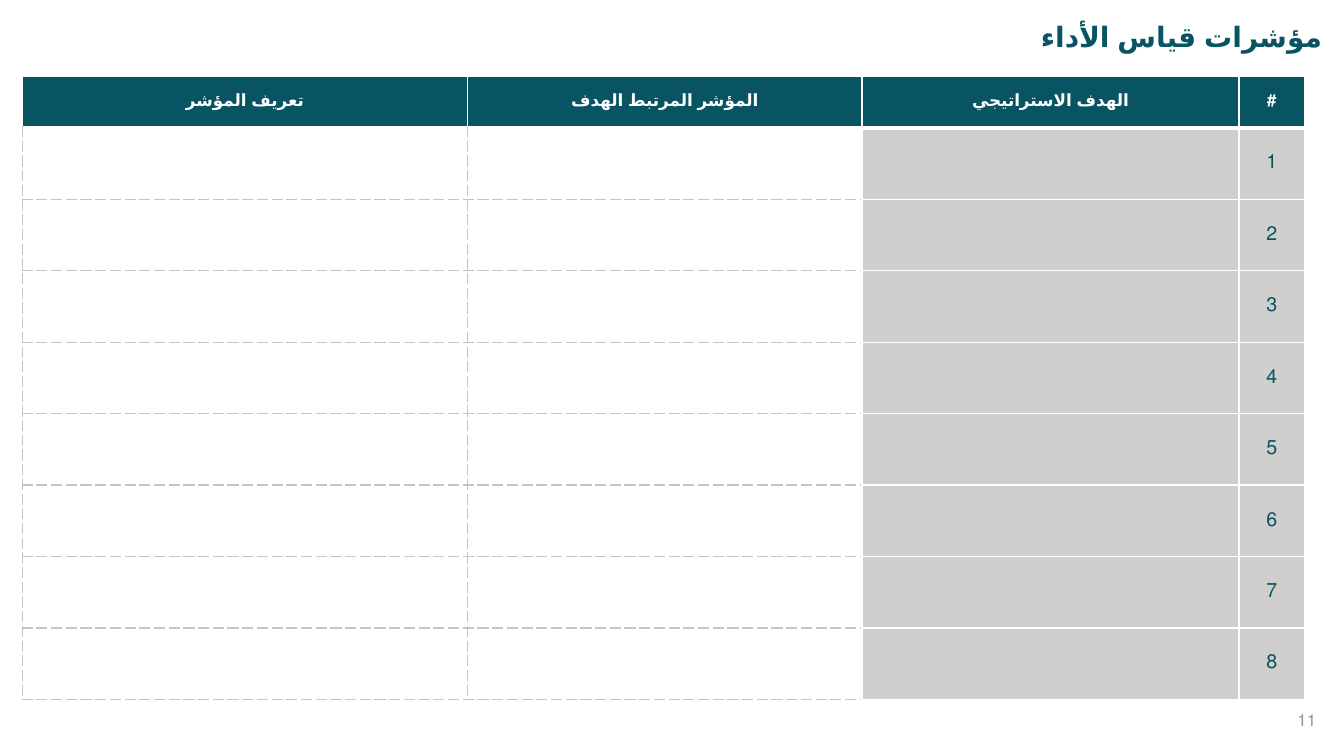
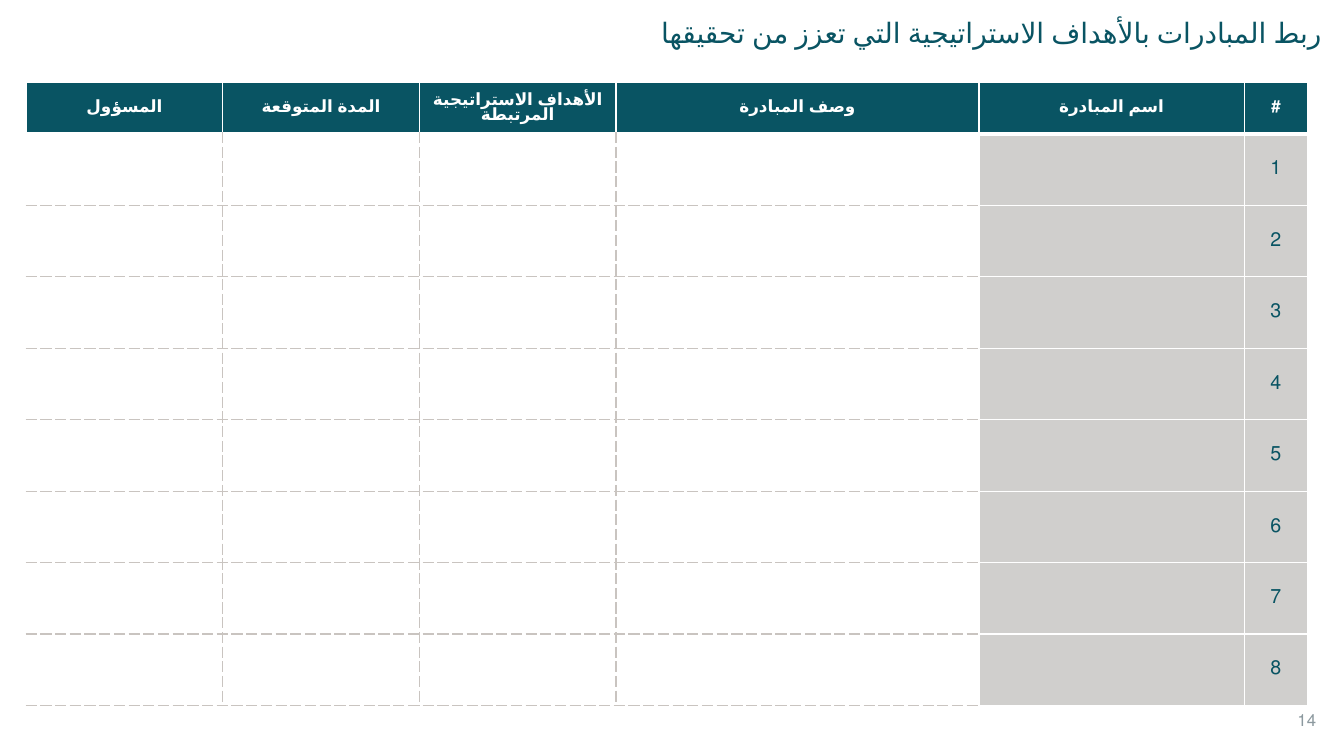
from dataclasses import dataclass

from lxml import etree
from pptx import Presentation
from pptx import util as u
from pptx.dml.color import RGBColor
from pptx.enum import lang, text as t
from pptx.oxml import ns


@dataclass(frozen=True)
class Theme:
    """Colours, fonts and type sizes of the deck."""
    teal: str = "095463"
    white: str = "FFFFFF"
    grey: str = "D0CFCD"
    rule: str = "C9C4C0"
    number: str = "8C999F"
    body_font: str = "Karla"
    plain_font: str = "Arial"
    title_font: str = "Calibri"
    title_size: int = 20
    index_size: int = 14
    small_size: int = 12


THEME = Theme()
WIDTH, HEIGHT = u.Inches(13.33), u.Inches(7.5)
TITLE_BOX = (5.18, 1.87, 93.92, 8.27)
NUMBER_BOX = (95.8, 93.2, 3.3, 5.33)
ROW_WEIGHTS = [0.51] + [0.71] * 8
SOLID = (THEME.white, 1, "solid")
HEAVY = (THEME.white, 3, "solid")
DASHED = (THEME.rule, 1, "dash")


def place(box):
    """Turn percentages of the slide into left, top, width and height."""
    return [int(side * share / 100) for side, share in zip((WIDTH, HEIGHT) * 2, box)]


def write(frame, content, font=THEME.body_font, size=THEME.small_size,
          color=THEME.teal, bold=False, align=t.PP_ALIGN.CENTER,
          rtl=True, spacing=None, before=None):
    """Write one formatted paragraph into a text frame."""
    paragraph = frame.paragraphs[0]
    paragraph.alignment = align
    if spacing:
        paragraph.line_spacing = spacing
    if before:
        paragraph.space_before = u.Pt(before)
    if rtl:
        paragraph._p.get_or_add_pPr().set("rtl", "1")
    run = paragraph.add_run()
    run.text = content
    run.font.name = font
    run.font.size = u.Pt(size)
    run.font.bold = bold
    run.font.color.rgb = RGBColor.from_string(color)
    run.font.language_id = lang.MSO_LANGUAGE_ID.ARABIC


def add_label(slide, box, content, **style):
    """Add a wrapping text box with one label."""
    frame = slide.shapes.add_textbox(*place(box)).text_frame
    frame.word_wrap = True
    write(frame, content, **style)


def style_cell(cell, fill, borders):
    """Fill a cell and draw its left, right, top and bottom borders."""
    cell.fill.solid()
    cell.fill.fore_color.rgb = RGBColor.from_string(fill)
    cell.vertical_anchor = t.MSO_ANCHOR.MIDDLE
    properties = cell._tc.get_or_add_tcPr()
    for position, (side, (color, weight, dash)) in enumerate(zip("LRTB", borders)):
        line = etree.Element(ns.qn(f"a:ln{side}"), w=str(u.Pt(weight)))
        paint = etree.SubElement(line, ns.qn("a:solidFill"))
        etree.SubElement(paint, ns.qn("a:srgbClr"), val=color)
        etree.SubElement(line, ns.qn("a:prstDash"), val=dash)
        properties.insert(position, line)


def add_register(slide, box, columns, outer_left):
    """Add a numbered blank register whose two right columns are shaded."""
    left, top, width, height = place(box)
    table = slide.shapes.add_table(len(ROW_WEIGHTS), len(columns),
                                   left, top, width, height).table
    table.horz_banding = False
    total_width = sum(weight for _, weight in columns)
    for column, (_, weight) in zip(table.columns, columns):
        column.width = int(width * weight / total_width)
    for row, weight in zip(table.rows, ROW_WEIGHTS):
        row.height = int(height * weight / sum(ROW_WEIGHTS))

    index_column = len(columns) - 1
    for c, (heading, _) in enumerate(columns):
        header = table.cell(0, c)
        style_cell(header, THEME.teal, (SOLID, SOLID, SOLID, HEAVY))
        heading_font = THEME.plain_font if c == index_column else THEME.body_font
        write(header.text_frame, heading, font=heading_font, color=THEME.white,
              bold=True, spacing=0.9, before=12)
        is_open = c < index_column - 1
        line = DASHED if is_open else SOLID
        left_line = outer_left if c == 0 else line
        right_line = DASHED if c < index_column - 2 else SOLID
        for r in range(1, len(ROW_WEIGHTS)):
            top_line = HEAVY if r == 1 else line
            cell = table.cell(r, c)
            style_cell(cell, THEME.white if is_open else THEME.grey,
                       (left_line, right_line, top_line, line))
            if c == index_column:
                write(cell.text_frame, str(r), font=THEME.plain_font,
                      size=THEME.index_size, spacing=0.9, before=12)


def add_register_slide(deck, title, number, box, columns, outer_left, **title_style):
    """Add a slide with a title, a register and a page number."""
    slide = deck.slides.add_slide(deck.slide_layouts[6])
    add_label(slide, NUMBER_BOX, number, font=THEME.plain_font,
              color=THEME.number, align=t.PP_ALIGN.LEFT)
    add_label(slide, TITLE_BOX, title, size=THEME.title_size,
              align=t.PP_ALIGN.RIGHT, **title_style)
    add_register(slide, box, columns, outer_left)


def main():
    """Build and save the deck."""
    deck = Presentation()
    deck.slide_width, deck.slide_height = WIDTH, HEIGHT
    add_register_slide(
        deck, "مؤشرات قياس الأداء", "11", (1.65, 10.13, 95.42, 82.4),
        [("تعريف المؤشر", 4.42), ("المؤشر المرتبط الهدف", 3.91),
         ("الهدف الاستراتيجي", 3.74), ("#", 0.65)],
        DASHED, font=THEME.title_font, bold=True)
    add_register_slide(
        deck, "ربط المبادرات بالأهداف الاستراتيجية التي تعزز من تحقيقها", "14",
        (1.95, 10.93, 95.35, 82.4),
        [("المسؤول", 1.95), ("المدة المتوقعة", 1.95),
         ("الأهداف الاستراتيجية المرتبطة", 1.95), ("وصف المبادرة", 3.6),
         ("اسم المبادرة", 2.63), ("#", 0.63)],
        SOLID, font=THEME.plain_font, rtl=False, spacing=0.9)
    deck.save("out.pptx")


if __name__ == "__main__":
    main()
